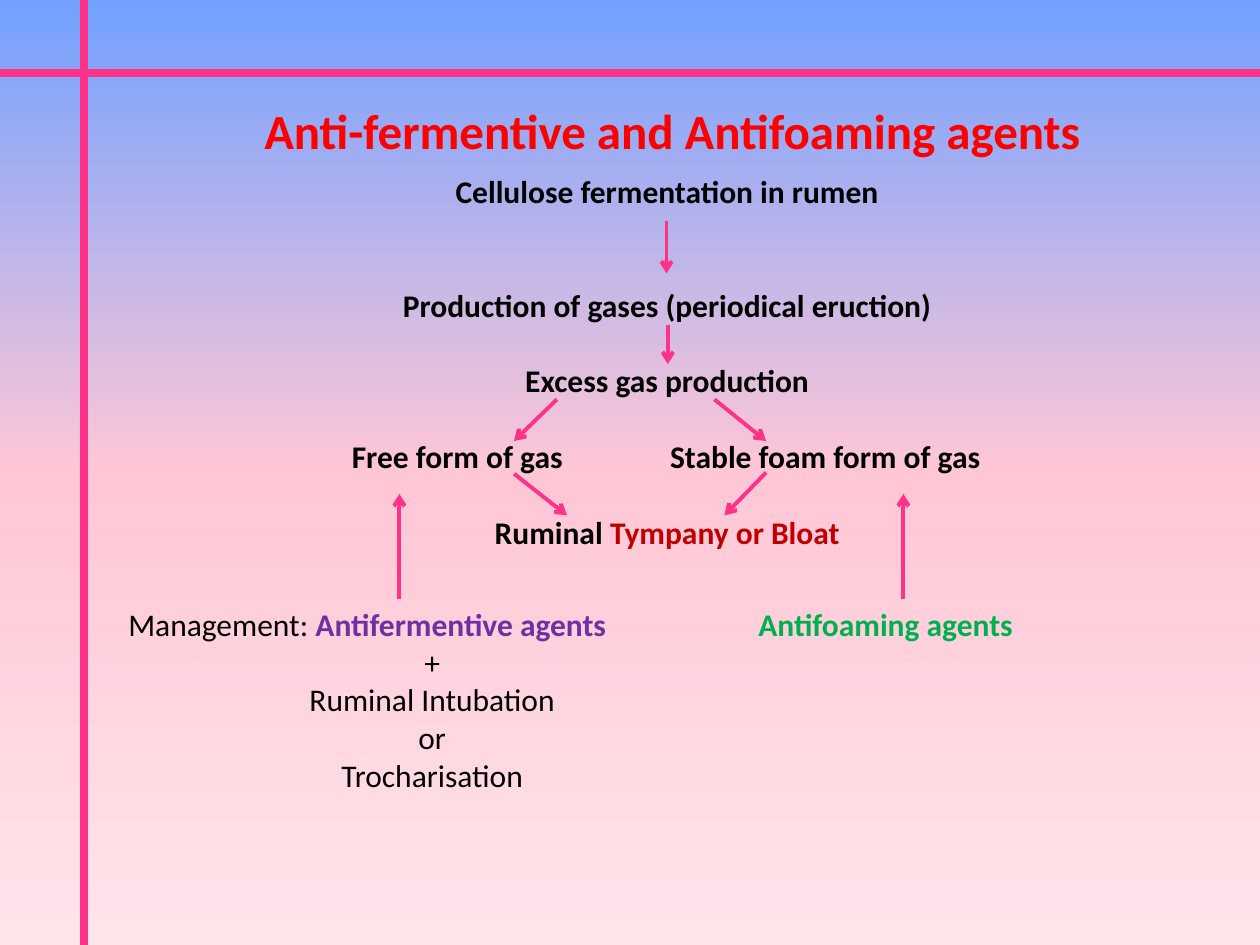
from copy import deepcopy

from lxml import etree
from pptx import Presentation
from pptx.dml.color import RGBColor
from pptx.enum.shapes import MSO_CONNECTOR
from pptx.enum.text import PP_ALIGN
from pptx.oxml.ns import qn
from pptx.util import Inches, Pt

STRAIGHT = MSO_CONNECTOR.STRAIGHT
LEFT, CENTER = PP_ALIGN.LEFT, PP_ALIGN.CENTER
COLORS = {
    "sky": "72A1FF", "rose": "FFC7D6", "blush": "FFE4EA", "pink": "FE3288",
    "title": "FF0000", "ink": "000000", "bloat": "C00000",
    "antifermentive": "7030A0", "antifoaming": "00B050",
}
WIDTH, HEIGHT = 10, 7.5
ROW = 0.3


def color(name):
    """Return the named colour."""
    return RGBColor.from_string(COLORS[name])


def add_text(slide, box, paragraphs, size=18, bold=True, align=CENTER, gaps=()):
    """Write paragraphs of (text, colour) runs, with optional gaps in rows above each."""
    frame = slide.shapes.add_textbox(*map(Inches, box)).text_frame
    frame.word_wrap = True
    for index, runs in enumerate(paragraphs):
        paragraph = frame.paragraphs[0] if index == 0 else frame.add_paragraph()
        paragraph.alignment = align
        if gaps:
            paragraph.space_before = Inches(gaps[index] * ROW)
        for words, ink in runs:
            run = paragraph.add_run()
            run.text = words
            run.font.name, run.font.size, run.font.bold = "Calibri", Pt(size), bold
            run.font.color.rgb = color(ink)
    return frame


def add_line(slide, start, end, width=2.25, arrow=True):
    """Draw a pink line, with an arrowhead at its end if wanted."""
    line = slide.shapes.add_connector(STRAIGHT, *map(Inches, (*start, *end)))
    line.line.color.rgb = color("pink")
    line.line.width = Pt(width)
    if arrow:
        etree.SubElement(line.line._get_or_add_ln(), qn("a:tailEnd"), type="arrow")
    etree.SubElement(line._element.spPr, qn("a:effectLst"))


def add_backdrop(slide):
    """Fill the background with a vertical gradient and cross it with two rules."""
    fill = slide.background.fill
    fill.gradient()
    fill.gradient_angle = 270
    stop_list = slide.element.find(".//" + qn("a:gsLst"))
    stop_list.insert(1, deepcopy(stop_list[0]))
    for stop, name, position in zip(fill.gradient_stops, ("sky", "rose", "blush"), (0, 0.5, 1)):
        stop.color.rgb = color(name)
        stop.position = position
    add_line(slide, (0.67, 0), (0.67, HEIGHT), width=4.5, arrow=False)
    add_line(slide, (0, 0.58), (WIDTH, 0.58), width=4.5, arrow=False)


def add_flow(slide, left, top, width, height):
    """Place the chain from fermentation to bloat with its arrows."""
    steps = [
        [("Cellulose fermentation in rumen", "ink")],
        [("Production of gases (periodical eruction)", "ink")],
        [("Excess gas production", "ink")],
        [("Ruminal ", "ink"), ("Tympany or Bloat", "bloat")],
    ]
    add_text(slide, (left, top, width, height), steps, gaps=(0, 2, 1, 3))
    forms = (("Free form of gas", 1.21, 2), ("Stable foam form of gas", 3.73, 2.8))
    for form, offset, form_width in forms:
        add_text(slide, (left + offset, top + 7 * ROW, form_width, 0.4), [[(form, "ink")]])
    arrows = (
        (3.87, 0.43, 3.87, 0.85), (3.88, 1.26, 3.88, 1.57),
        (3, 1.85, 2.66, 2.18), (4.25, 1.85, 4.66, 2.18),
        (2.66, 2.44, 3.08, 2.77), (4.66, 2.43, 4.33, 2.77),
    )
    for x1, y1, x2, y2 in arrows:
        add_line(slide, (left + x1, top + y1), (left + x2, top + y2))


def add_management(slide, left, top, width, height):
    """Place the two treatments, each pointing up to the form of gas it treats."""
    treatments = [[("Management: ", "ink"), ("Antifermentive agents", "antifermentive")]]
    treatments += [[(step, "ink")] for step in ("+", "Ruminal Intubation", "or", "Trocharisation")]
    frame = add_text(slide, (left, top, 5.02, height), treatments, bold=False)
    frame.paragraphs[0].alignment = LEFT
    frame.paragraphs[0].runs[1].font.bold = True
    add_text(slide, (left + 5, top, width - 5, 0.4),
             [[("Antifoaming agents", "antifoaming")]], align=LEFT)
    for x in (2.25, 6.25):
        add_line(slide, (left + x, top), (left + x, top - 0.83))


def main():
    """Build the slide and save it."""
    deck = Presentation()
    deck.slide_width, deck.slide_height = Inches(WIDTH), Inches(HEIGHT)
    slide = deck.slides.add_slide(deck.slide_layouts[6])
    add_backdrop(slide)
    add_text(slide, (1, 0.75, 8.67, 0.57),
             [[("Anti-fermentive and Antifoaming agents", "title")]], size=28)
    add_flow(slide, 1.42, 1.32, 7.75, 3.13)
    add_management(slide, 0.92, 4.75, 8.42, 1.62)
    deck.save("out.pptx")


if __name__ == "__main__":
    main()
